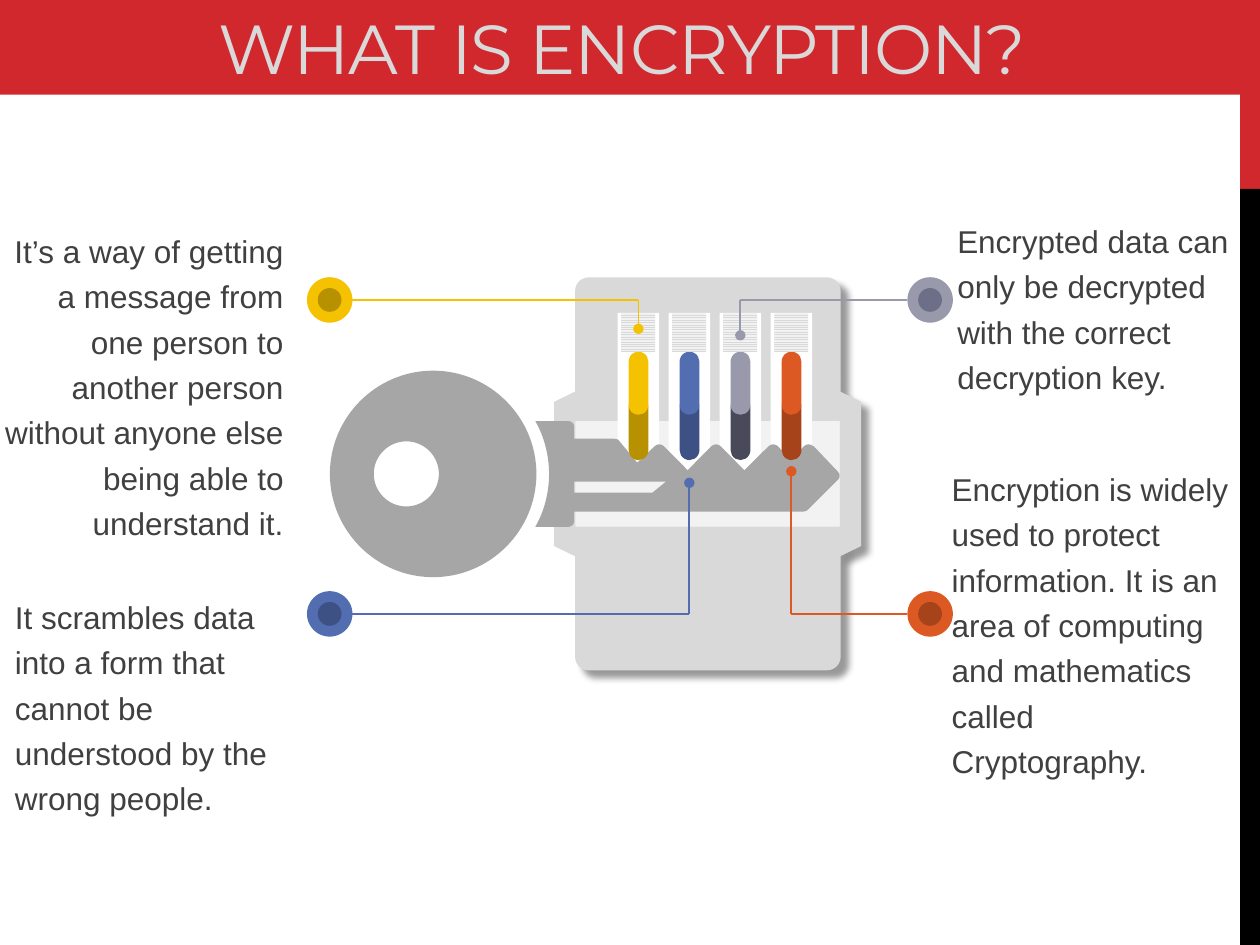
import math
import lxml.etree
import pptx
import pptx.dml.color
import pptx.enum.dml
import pptx.enum.shapes
import pptx.enum.text
import pptx.oxml
import pptx.oxml.ns
import pptx.util

Pt = pptx.util.Pt
Kind = pptx.enum.shapes.MSO_SHAPE
Align = pptx.enum.text.PP_ALIGN
qn = pptx.oxml.ns.qn

RED, BODY, STEEL = "D1282E", "D9D9D9", "A6A6A6"
PINS = [("F5C201", "B89101"), ("526DB0", "3D5185"),
        ("989AAC", "484A5A"), ("DC5924", "A6431A")]
SHADOW = (
    '<a:effectLst xmlns:a="http://schemas.openxmlformats.org/drawingml/2006/main">'
    '<a:outerShdw blurRad="50800" dist="76200" dir="2700000" algn="tl" rotWithShape="0">'
    '<a:srgbClr val="000000"><a:alpha val="40000"/></a:srgbClr>'
    '</a:outerShdw></a:effectLst>')


def color(code):
    return pptx.dml.color.RGBColor.from_string(code)


def paint(shape, code):
    shape.shadow.inherit = False
    shape.fill.solid()
    shape.fill.fore_color.rgb = color(code)
    shape.line.fill.background()


def add(slide, kind, x, y, w, h, code, adjust=()):
    shape = slide.shapes.add_shape(kind, Pt(x), Pt(y), Pt(w), Pt(h))
    paint(shape, code)
    for i, value in enumerate(adjust):
        shape.adjustments[i] = value
    return shape


def shade(shape):
    props = shape._element.spPr
    props.remove(props.find(qn("a:effectLst")))
    props.append(pptx.oxml.parse_xml(SHADOW))


def disc(slide, x, y, r, code):
    add(slide, Kind.OVAL, x - r, y - r, 2 * r, 2 * r, code)


def line(slide, x1, y1, x2, y2, code, dot=False):
    link = slide.shapes.add_connector(
        pptx.enum.shapes.MSO_CONNECTOR.STRAIGHT, Pt(x1), Pt(y1), Pt(x2), Pt(y2))
    link.line.color.rgb = color(code)
    link.line.width = Pt(1)
    props = link._element.spPr
    if dot:
        lxml.etree.SubElement(props.find(qn("a:ln")), qn("a:tailEnd"), type="oval")
    lxml.etree.SubElement(props, qn("a:effectLst"))


def bend(nodes):
    curve = lxml.etree.Element(qn("a:cubicBezTo"))
    nodes[0].addprevious(curve)
    for node in nodes:
        curve.append(node[0])
        node.getparent().remove(node)


def outline(slide, x, y, paths, code):
    pen = None
    for start, *steps in paths:
        dots = [(Pt(x + px), Pt(y + py)) for px, py in sum(steps, [start])]
        if pen:
            pen.move_to(*dots[0])
        else:
            pen = slide.shapes.build_freeform(*dots[0], scale=1.0)
        pen.add_line_segments(dots[1:], close=True)
    shape = pen.convert_to_shape()
    nodes = list(shape._element.spPr.iter(qn("a:lnTo")))
    for step in sum((path[1:] for path in paths), []):
        if len(step) == 3:
            bend(nodes[:3])
        nodes = nodes[len(step):]
    paint(shape, code)


def ring(x, y, r, way):
    k = 0.55 * r
    path = [(x + r, y)]
    for c, s in [(1, 0), (0, 1), (-1, 0), (0, -1)]:
        path.append([(x + r * c - k * s, y + way * (r * s + k * c)),
                     (x - r * s + k * c, y + way * (r * c + k * s)),
                     (x - r * s, y + way * r * c)])
    return path


def style(frame, size, font, code, align):
    para = frame.paragraphs[0]
    para.alignment = align
    run = para.runs[0]
    run.font.size = Pt(size)
    run.font.name = font
    run.font.color.rgb = color(code)
    return para


def header(slide, x, y, w, h):
    add(slide, Kind.RECTANGLE, x + w - 11.3, y, 11.3, 108, RED)
    add(slide, Kind.RECTANGLE, x + w - 11.3, y + 108, 11.3, h - 108, "000000")
    bar = add(slide, Kind.RECTANGLE, x, y, w - 8.64, 54.2, RED)
    frame = bar.text_frame
    frame.text = "WHAT IS ENCRYPTION?"
    frame.vertical_anchor = pptx.enum.text.MSO_ANCHOR.BOTTOM
    para = style(frame, 39.6, "Montserrat", BODY, Align.CENTER)
    para.runs[0].font._element.set("spc", "-60")


def note(slide, x, y, w, h, text, align=Align.LEFT):
    frame = slide.shapes.add_textbox(Pt(x), Pt(y), Pt(w), Pt(h)).text_frame
    frame.word_wrap = True
    frame.margin_left = frame.margin_right = 0
    frame.margin_top = frame.margin_bottom = 0
    frame.text = text
    style(frame, 18, "Arial", "404040", align).line_spacing = 1.2


def key(slide, x, y):
    blade = [(276.5, 43.2), [(290.2, 57.6)],
             [(291.8, 59), (291.8, 61.2), (290.2, 62.6)], [(273.6, 79.2)],
             [(272.9, 79.9), (271.8, 80.6), (270.7, 80.6)], [(139.7, 80.6)],
             [(139.7, 85.7)], [(139.7, 87.8), (138.2, 89.3), (136.1, 89.3)],
             [(117.4, 89.3)], [(122.4, 80.6), (125.3, 70.2), (125.3, 59)],
             [(125.3, 48.2), (122.4, 37.4), (117.4, 28.8)], [(136.1, 28.8)],
             [(138.2, 28.8), (139.7, 30.3), (139.7, 32.4)], [(139.7, 38.9)],
             [(162, 38.9)], [(163.4, 38.9), (164.2, 39.1), (164.9, 39.6)]]
    teeth = [(188.3, 175.7, 52.6), (220.7, 204.5, 56.9),
             (253.4, 236.9, 56.9), (273.6, 263.5, 51.1)]
    for peak, foot, depth in teeth:
        blade += [[(foot, depth)], [(peak - 2.6, 43.2)],
                  [(peak - 1.2, 41.8), (peak + 1.2, 41.8), (peak + 2.6, 43.2)]]
    slot = [(139.7, 63.4), [(139.7, 69.8)], [(184.3, 69.8)], [(192.2, 63.4)]]
    outline(slide, x, y, [blade, slot], STEEL)
    outline(slide, x, y, [ring(59, 59, 59, 1), ring(43.7, 59, 18.6, -1)], STEEL)


def flange(slide, x, y, turn):
    part = add(slide, Kind.TRAPEZOID, x - 47.15, y - 6.1, 94.3, 12.2, BODY, [0.488])
    part.rotation = turn
    return part


def pin(slide, x, y, top, low):
    for drop, code in [(68.4, low), (42.5, top)]:
        add(slide, Kind.ROUNDED_RECTANGLE, x + 6.3, y + drop, 11.3, 36, code, [0.5])
    coil = add(slide, Kind.RECTANGLE, x + 2.1, y + 20.2, 19.5, 22.3, BODY)
    coil.fill.patterned()
    coil.fill.pattern = pptx.enum.dml.MSO_PATTERN.NARROW_HORIZONTAL
    coil.fill.fore_color.rgb = color(BODY)
    coil.fill.back_color.rgb = color("F2F2F2")


def lock(slide, x, y, w, h):
    half = 82.1
    mid = y + h / 2
    slots = [x + 24.3 + 29.15 * i for i in range(4)]
    shade(add(slide, Kind.ROUND_2_SAME_RECTANGLE, x, y, w, half, BODY, [0.095, 0]))
    add(slide, Kind.RECTANGLE, x, y + half, w, h - 2 * half, "F2F2F2")
    for left in slots:
        add(slide, Kind.RECTANGLE, left, y + 20.2, 23.8, 90.7, "FFFFFF")
    flange(slide, x - 5.8, mid, 270)
    key(slide, x - 140.1, y + 53.3)
    for left, pair in zip(slots, PINS):
        pin(slide, left, y, *pair)
    shade(add(slide, Kind.ROUND_2_SAME_RECTANGLE, x, y + h - half, w, half, BODY,
              [0, 0.095]))
    add(slide, Kind.RECTANGLE, x + 15.5, y + 2.2, 125.3, 18, BODY)
    shade(flange(slide, x + w + 5.6, mid, 90))


def callout(slide, x, y, stem, tip, rim, core):
    disc(slide, x, y, 13, rim)
    disc(slide, x, y, 6.8, core)
    edge = x + math.copysign(13, stem - x)
    line(slide, edge, y, stem, y, rim)
    line(slide, stem, y, stem, tip, rim, dot=True)


def main():
    deck = pptx.Presentation()
    deck.slide_width, deck.slide_height = Pt(720), Pt(540)
    slide = deck.slides.add_slide(deck.slide_layouts[6])
    header(slide, 0, 0, 720, 540)
    note(slide, 0, 128.2, 162, 177.8,
         "It’s a way of getting a message from one person to another person "
         "without anyone else being able to understand it.", Align.RIGHT)
    note(slide, 8.5, 337.5, 170, 136.8,
         "It scrambles data into a form that cannot be understood by the wrong people.")
    note(slide, 547, 122.5, 162, 104.4,
         "Encrypted data can only be decrypted with the correct decryption key.")
    note(slide, 543.8, 264.2, 162, 185,
         "Encryption is widely used to protect information. It is an area of "
         "computing and mathematics called Cryptography.")
    lock(slide, 328.6, 158.5, 151.8, 224.6)
    ends = [(188.4, 171.4, 187.9, "B89101"), (188.4, 350.8, 275.9, "3D5185"),
            (531.5, 171.4, 191.6, "6C6F87"), (531.5, 350.8, 269.3, "A6431A")]
    for i, (x, y, tip, core) in enumerate(ends):
        callout(slide, x, y, 364.8 + 29.13 * i, tip, PINS[i][0], core)
    deck.save("out.pptx")


if __name__ == "__main__":
    main()
